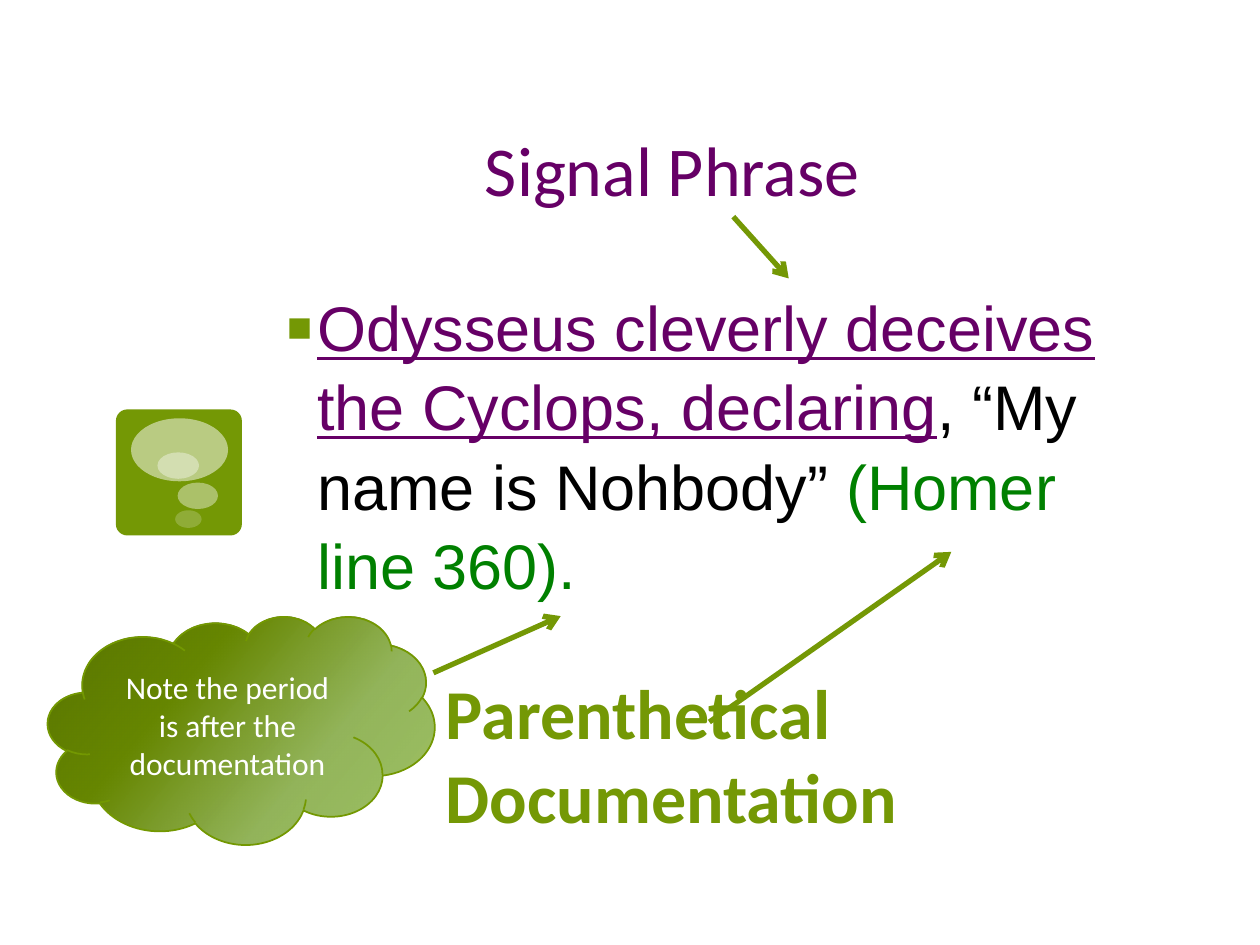
from lxml import etree
from pptx import Presentation, util as u
from pptx.dml.color import RGBColor
from pptx.enum import shapes, text
from pptx.oxml import parse_xml
from pptx.oxml.ns import nsdecls, qn

COLORS = {
    "green": "749805", "outline": "739801", "purple": "660066",
    "citation": "008000", "black": "000000", "white": "FFFFFF",
}
CLOUD_STOPS = [(0, "8FB84C", 85), (33, "8EB153", 95), (67, "668600", 100), (100, "587400", 100)]
COLUMNS, ROWS = 10, 7.5


def color_xml(value, alpha):
    return f'<a:srgbClr val="{value}"><a:alpha val="{alpha * 1000}"/></a:srgbClr>'


class SlideBuilder:
    def __init__(self, presentation):
        self.column = presentation.slide_width / COLUMNS
        self.row = presentation.slide_height / ROWS
        self.slide = presentation.slides.add_slide(presentation.slide_layouts[6])

    def place(self, *lengths):
        """Turn alternating columns and rows into slide lengths."""
        return [u.Emu(round(n * (self.row if i % 2 else self.column))) for i, n in enumerate(lengths)]

    def style(self, font, size, color=None, name="Calibri", bold=False):
        font.name, font.size, font.bold = name, u.Pt(size), bold
        if color:
            font.color.rgb = RGBColor.from_string(COLORS[color])

    def shape(self, kind, box, color, alpha=100, parent=None):
        shape = (parent or self.slide).shapes.add_shape(kind, *self.place(*box))
        shape.shadow.inherit = False
        shape.line.fill.background()
        shape.fill.solid()
        shape.fill.fore_color.rgb = RGBColor.from_string(COLORS[color])
        if alpha < 100:
            solid = shape._element.spPr.find(qn("a:solidFill"))
            etree.SubElement(solid[0], qn("a:alpha")).set("val", str(alpha * 1000))
        return shape

    def textbox(self, box, anchor=text.MSO_ANCHOR.BOTTOM):
        frame = self.slide.shapes.add_textbox(*self.place(*box)).text_frame
        frame.word_wrap = True
        frame.vertical_anchor = anchor
        return frame.paragraphs[0]

    def label(self, box, words, color, bold=False):
        paragraph = self.textbox(box)
        paragraph.text = words
        self.style(paragraph.font, 40, color, bold=bold)

    def bullet(self, box, parts):
        paragraph = self.textbox(box, text.MSO_ANCHOR.TOP)
        paragraph.space_before = u.Pt(18)
        paragraph.line_spacing = 1.05
        properties = paragraph._p.get_or_add_pPr()
        properties.set("marL", str(u.Inches(0.25)))
        properties.set("indent", str(-u.Inches(0.25)))
        for xml in (f'<a:buClr {nsdecls("a")}><a:srgbClr val="{COLORS["green"]}"/></a:buClr>',
                    f'<a:buSzPct {nsdecls("a")} val="130000"/>',
                    f'<a:buFont {nsdecls("a")} typeface="Arial"/>',
                    f'<a:buChar {nsdecls("a")} char="▪"/>'):
            properties.append(parse_xml(xml))
        self.style(paragraph.font, 36, name="Arial")
        for words, color, underline in parts:
            run = paragraph.add_run()
            run.text = words
            run.font.color.rgb = RGBColor.from_string(COLORS[color])
            run.font.underline = underline

    def arrow(self, start, end):
        line = self.slide.shapes.add_connector(
            shapes.MSO_CONNECTOR.STRAIGHT, *self.place(*start, *end))
        line.line.color.rgb = RGBColor.from_string(COLORS["green"])
        line.line.width = u.Pt(3)
        etree.SubElement(line.line._get_or_add_ln(), qn("a:tailEnd")).set("type", "arrow")
        etree.SubElement(line._element.spPr, qn("a:effectLst"))

    def cloud(self, box, words):
        cloud = self.shape(shapes.MSO_SHAPE.CLOUD, box, "green")
        cloud.line.color.rgb = RGBColor.from_string(COLORS["outline"])
        cloud.line.width = u.Pt(1)
        stops = "".join(f'<a:gs pos="{position * 1000}">{color_xml(value, alpha)}</a:gs>'
                        for position, value, alpha in CLOUD_STOPS)
        properties = cloud._element.spPr
        properties.replace(properties.find(qn("a:solidFill")), parse_xml(
            f'<a:gradFill {nsdecls("a")} rotWithShape="1"><a:gsLst>{stops}</a:gsLst>'
            f'<a:lin ang="{220 * 60000}" scaled="0"/></a:gradFill>'))
        frame = cloud.text_frame
        frame.word_wrap = True
        frame.vertical_anchor = text.MSO_ANCHOR.MIDDLE
        paragraph = frame.paragraphs[0]
        paragraph.text = words
        paragraph.alignment = text.PP_ALIGN.CENTER
        self.style(paragraph.font, 18, "white")

    def thought_icon(self, box, bubbles):
        group = self.slide.shapes.add_group_shape()
        tile = self.shape(shapes.MSO_SHAPE.ROUNDED_RECTANGLE, box, "green", parent=group)
        tile.adjustments[0] = 0.09
        for bubble, alpha in bubbles:
            self.shape(shapes.MSO_SHAPE.OVAL, bubble, "white", alpha, group)


def main():
    presentation = Presentation()
    presentation.slide_width, presentation.slide_height = u.Inches(10), u.Inches(7.5)
    builder = SlideBuilder(presentation)

    # Thought bubble icon
    builder.thought_icon((0.92, 3.25, 1, 1), [
        ((1.04, 3.32, 0.77, 0.5), 50), ((1.41, 3.83, 0.32, 0.21), 40),
        ((1.39, 4.05, 0.21, 0.14), 20), ((1.25, 3.59, 0.33, 0.21), 38)])

    # Quotation and its labels
    builder.label((3.75, 0.75, 5.41, 0.97), "Signal Phrase", "purple")
    builder.bullet((2.17, 2.21, 6.98, 4.49), [
        ("Odysseus cleverly deceives the Cyclops, declaring", "purple", True),
        (", “My name is Nohbody” ", "black", False),
        ("(Homer line 360).", "citation", False)])
    builder.label((3.44, 5.73, 5.41, 0.97), "Parenthetical Documentation", "green", bold=True)

    # Arrows to the quotation, with the note on the period
    builder.arrow((5.82, 1.72), (6.26, 2.21))
    builder.arrow((5.63, 5.73), (7.55, 4.38))
    builder.cloud((0.38, 4.89, 3.07, 1.81), "Note the period is after the documentation")
    builder.arrow((3.44, 5.34), (4.45, 4.89))

    presentation.save("out.pptx")


if __name__ == "__main__":
    main()
